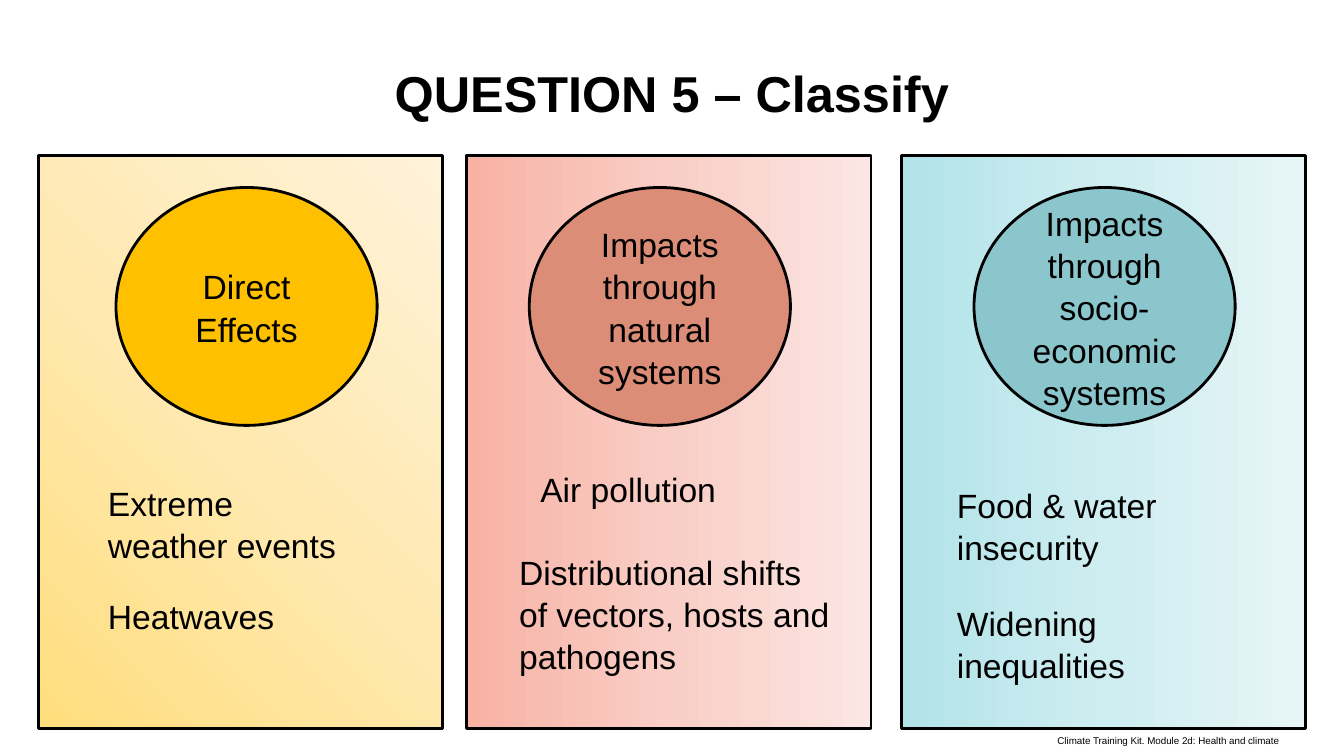
"""Build the classification slide with three gradient columns."""
from copy import deepcopy
from dataclasses import dataclass

from lxml.etree import SubElement
from pptx import Presentation
from pptx.dml.color import RGBColor as RGB
from pptx.enum.shapes import MSO_SHAPE as SHAPE
from pptx.enum.text import MSO_ANCHOR as ANCHOR, MSO_AUTO_SIZE as FIT, PP_ALIGN as ALIGN
from pptx.oxml.ns import qn
from pptx.util import Emu, Inches, Pt

W, H = Inches(13.33), Inches(7.5)
COLORS = {
    "ink": "000000", "paper": "FFFFFF",
    "direct": "FFC000", "natural": "DC8D77", "social": "8AC6CC",
}
GRADIENTS = {
    "direct": ("FFDE7E", "FFE9B1", "FFF2D9"),
    "natural": ("F8B2A4", "F9CEC6", "FBE6E3"),
    "social": ("B1E3E9", "CEEDF0", "E7F5F7"),
}
PANEL_TOP, PANEL_W, PANEL_H = 20.53, 30.08, 75.87
OVAL_TOP, OVAL_W, OVAL_H = 24.8, 19.43, 31.47
LIST_H = 29.33


@dataclass(frozen=True)
class Box:
    """Place and size in percent of the slide."""
    x: float
    y: float
    w: float
    h: float

    def emu(self) -> tuple:
        return tuple(Emu(int(v * side / 100)) for v, side in
                     zip((self.x, self.y, self.w, self.h), (W, H, W, H)))


@dataclass(frozen=True)
class Item:
    text: str
    indent: float = 0


@dataclass(frozen=True)
class Column:
    key: str
    heading: str
    panel_x: float
    oval_x: float
    angle: int
    list_box: Box
    gap: int
    items: tuple


COLUMNS = (
    Column("direct", "Direct Effects", 2.85, 8.63, 45, Box(7.28, 62.93, 19.43, LIST_H), 20,
           (Item("Extreme weather events"), Item("Heatwaves"))),
    Column("natural", "Impacts through natural systems", 34.73, 39.38, 0,
           Box(37.88, 61.07, 24.61, LIST_H), 29,
           (Item("Air pollution", 0.21),
            Item("Distributional shifts of vectors, hosts and pathogens"))),
    Column("social", "Impacts through socio-economic systems", 67.07, 72.47, 0,
           Box(70.44, 63.2, 23.26, LIST_H), 24,
           (Item("Food & water insecurity"), Item("Widening inequalities"))),
)


def apply(target, formats: dict) -> None:
    for name, value in formats.items():
        setattr(target, name, value)


def place(sp, box: Box) -> None:
    apply(sp, dict(zip(("left", "top", "width", "height"), box.emu())))


def write(sp, items: tuple, size: int = 24, bold: bool = False, align=ALIGN.LEFT,
          anchor=ANCHOR.TOP, gap: int = 0) -> None:
    tf = sp.text_frame
    apply(tf, {"word_wrap": True, "auto_size": FIT.NONE, "vertical_anchor": anchor,
               "margin_left": Inches(0.1), "margin_right": Inches(0.1),
               "margin_top": Inches(0.05), "margin_bottom": Inches(0.05)})
    for i, item in enumerate(items):
        p = tf.add_paragraph() if i else tf.paragraphs[0]
        p_pr = p._p.get_or_add_pPr()
        p_pr.set("marL", str(Inches(item.indent)))
        p_pr.set("indent", "0")
        SubElement(p_pr, qn("a:buNone"))
        apply(p, {"alignment": align, "line_spacing": 1.05,
                  "space_before": Pt(gap if i else 0), "space_after": Pt(0)})
        r = p.add_run()
        r.text = item.text
        apply(r.font, {"name": "Arial", "size": Pt(size), "bold": bold})
        r.font.color.rgb = RGB.from_string(COLORS["ink"])


def add_outlined(s, kind, box: Box):
    sp = s.shapes.add_shape(kind, *box.emu())
    sp.shadow.inherit = False
    sp.line.color.rgb = RGB.from_string(COLORS["ink"])
    sp.line.width = Pt(2)
    return sp


def fill_gradient(sp, colors: tuple, angle: int) -> None:
    sp.fill.gradient()
    sp.fill.gradient_angle = angle
    stops = sp._element.spPr.find(".//" + qn("a:gsLst"))
    stops.append(deepcopy(stops[0]))
    for i, (stop, color) in enumerate(zip(sp.fill.gradient_stops, colors)):
        stop.position = i / 2
        stop.color.rgb = RGB.from_string(color)


def draw_column(s, col: Column, body) -> None:
    panel = add_outlined(s, SHAPE.RECTANGLE, Box(col.panel_x, PANEL_TOP, PANEL_W, PANEL_H))
    fill_gradient(panel, GRADIENTS[col.key], col.angle)
    oval = add_outlined(s, SHAPE.OVAL, Box(col.oval_x, OVAL_TOP, OVAL_W, OVAL_H))
    oval.fill.solid()
    oval.fill.fore_color.rgb = RGB.from_string(COLORS[col.key])
    write(oval, (Item(col.heading),), align=ALIGN.CENTER, anchor=ANCHOR.MIDDLE)
    s.shapes._spTree.append(body._element)
    place(body, col.list_box)
    write(body, col.items, gap=col.gap)


def main() -> None:
    prs = Presentation()
    apply(prs, {"slide_width": W, "slide_height": H})
    s = prs.slides.add_slide(prs.slide_layouts.get_by_name("Comparison"))
    title, *bodies, spare = list(s.placeholders)
    spare._element.getparent().remove(spare._element)

    place(title, Box(0, 7.2, 100, 12.53))
    title.fill.solid()
    title.fill.fore_color.rgb = RGB.from_string(COLORS["paper"])
    write(title, (Item("QUESTION 5 – Classify"),), size=36, bold=True, align=ALIGN.CENTER)

    footer = s.shapes.add_textbox(*Box(77.94, 96.4, 18.68, 2.93).emu())
    write(footer, (Item("Climate Training Kit. Module 2d: Health and climate"),), size=7)
    for col, body in zip(COLUMNS, bodies):
        draw_column(s, col, body)
    prs.save("out.pptx")


if __name__ == "__main__":
    main()
